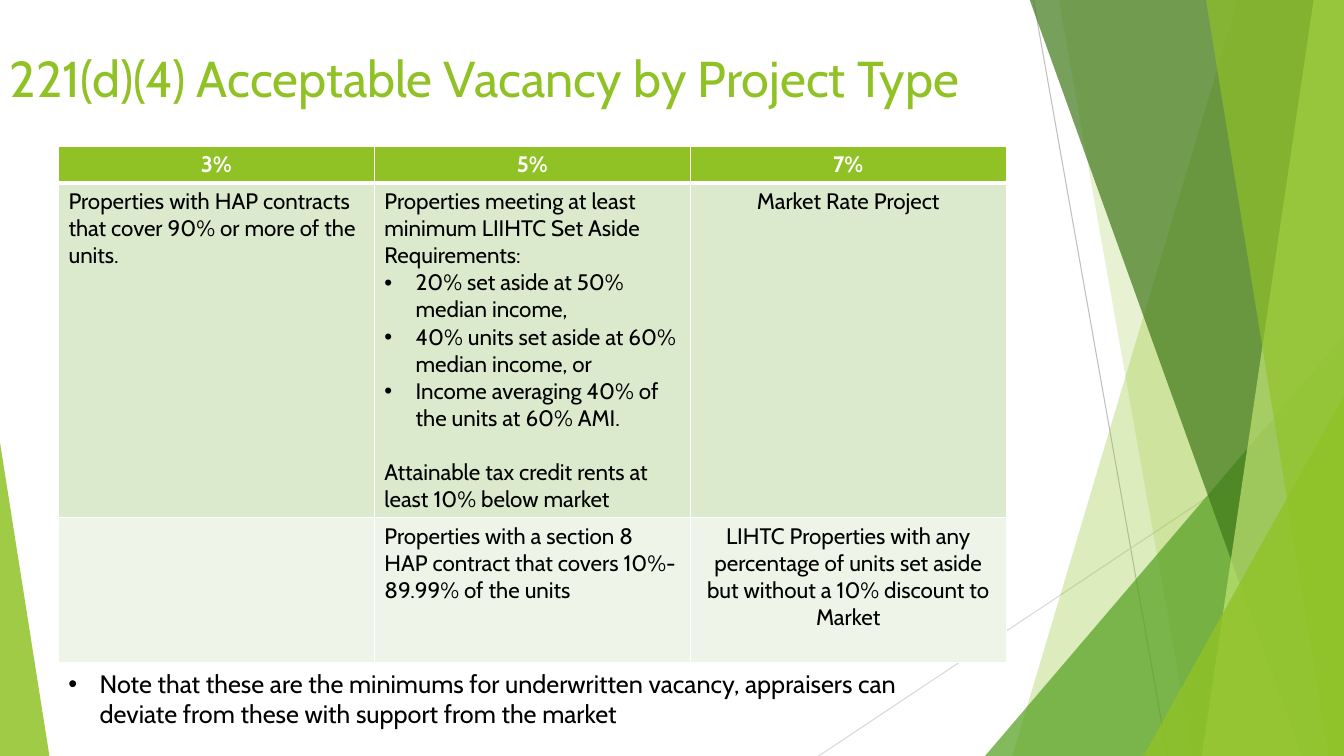
"""Build the slide on acceptable vacancy by project type."""
from dataclasses import dataclass
from typing import Any

from lxml.etree import SubElement
from pptx import Presentation
from pptx.dml.color import RGBColor
from pptx.enum.shapes import MSO_CONNECTOR as Connector, MSO_SHAPE as Preset
from pptx.enum.text import MSO_ANCHOR as Anchor, PP_ALIGN as Align
from pptx.oxml.ns import qn
from pptx.util import Inches, Pt


@dataclass(frozen=True)
class Theme:
    font: str = "Cabin"
    green: str = "90C226"
    leaf: str = "54A021"
    forest: str = "3F7819"
    lime: str = "C0E474"
    band_dark: str = "DBE9CD"
    band_light: str = "EEF4E8"
    white: str = "FFFFFF"
    black: str = "000000"
    gray: str = "BFBFBF"
    light_gray: str = "D9D9D9"
    title_size: int = 36
    note_size: int = 18
    table_size: int = 16


THEME = Theme()
TOP, BOTTOM, RIGHT = -0.01, 7.5, 13.33
INDENT = 0.31


@dataclass(frozen=True)
class Ray:
    start: tuple[float, float]
    end: tuple[float, float]
    color: str


@dataclass(frozen=True)
class Shard:
    top_left: float
    bottom_left: float
    color: str
    opacity: int


@dataclass(frozen=True)
class Wedge:
    left: float
    top: float
    width: float
    apex: float
    color: str
    opacity: int


@dataclass(frozen=True)
class Line:
    text: str
    align: Any = Align.LEFT
    bullet: bool = False
    space_before: float = 0


@dataclass(frozen=True)
class Style:
    size: int
    color: str
    bold: bool = False


RAYS = (
    Ray((10.25, 0), (11.58, BOTTOM), THEME.gray),
    Ray((RIGHT, 4.03), (8.12, BOTTOM), THEME.light_gray),
)
FACETS = (
    Shard(12.28, 10.04, THEME.green, 30),
    Shard(10.5, 11.83, THEME.green, 20),
    Wedge(9.77, 3.33, 3.56, 1, THEME.leaf, 72),
    Shard(10.21, 12.91, THEME.forest, 70),
    Shard(13.03, 11.92, THEME.lime, 70),
    Shard(11.96, 13.18, THEME.green, 65),
    Wedge(11.34, 3.93, 1.99, 1, THEME.green, 80),
    Wedge(0, 4.39, 0.49, 0, THEME.green, 85),
)
ROW_HEIGHTS = (0.35, 3.32, 1.44)
ROW_FILLS = (THEME.green, THEME.band_dark, THEME.band_light)
ROWS = (
    tuple((Line(share, Align.CENTER),) for share in ("3%", "5%", "7%")),
    (
        (Line("Properties with HAP contracts that cover 90% or more of the units."),),
        (
            Line("Properties meeting at least minimum LIIHTC Set Aside Requirements:"),
            Line("20% set aside at 50% median income,", bullet=True),
            Line("40% units set aside at 60% median income, or", bullet=True),
            Line("Income averaging 40% of the units at 60% AMI.", bullet=True),
            Line("Attainable tax credit rents at least 10% below market", space_before=19.4),
        ),
        (Line("Market Rate Project", Align.CENTER),),
    ),
    (
        (),
        (Line("Properties with a section 8 HAP contract that covers 10%-89.99% of the units"),),
        (Line("LIHTC Properties with any percentage of units set aside but without "
              "a 10% discount to Market", Align.CENTER),),
    ),
)
TITLE = Line("221(d)(4) Acceptable Vacancy by Project Type")
NOTE = Line("Note that these are the minimums for underwritten vacancy, appraisers can "
            "deviate from these with support from the market", bullet=True)


def apply_format(target: Any, values: dict[str, Any]) -> None:
    """Set every attribute in values on target."""
    for name, value in values.items():
        setattr(target, name, value)


def write_lines(frame: Any, lines: tuple[Line, ...], style: Style) -> None:
    """Write lines as paragraphs of a text frame."""
    for index, line in enumerate(lines):
        paragraph = frame.add_paragraph() if index else frame.paragraphs[0]
        apply_format(paragraph, {"alignment": line.align, "space_before": Pt(line.space_before)})
        run = paragraph.add_run()
        run.text = line.text
        apply_format(run.font, {"name": THEME.font, "size": Pt(style.size), "bold": style.bold})
        run.font.color.rgb = RGBColor.from_string(style.color)
        if line.bullet:
            properties = paragraph._p.get_or_add_pPr()
            properties.set("marL", str(Inches(INDENT)))
            properties.set("indent", str(-Inches(INDENT)))
            SubElement(properties, qn("a:buFont"), typeface="Arial")
            SubElement(properties, qn("a:buChar"), char="•")


def draw_ray(slide: Any, ray: Ray) -> None:
    """Draw a thin line without a shadow."""
    ends = [Inches(value) for value in (*ray.start, *ray.end)]
    connector = slide.shapes.add_connector(Connector.STRAIGHT, *ends)
    connector.line.width = Pt(0.75)
    connector.line.color.rgb = RGBColor.from_string(ray.color)
    SubElement(connector._element.spPr, qn("a:effectLst"))


def draw_facet(slide: Any, facet: Shard | Wedge) -> None:
    """Draw one translucent facet of the backdrop."""
    if isinstance(facet, Wedge):
        box = (facet.left, facet.top, facet.width, BOTTOM - facet.top)
        shape = slide.shapes.add_shape(Preset.ISOSCELES_TRIANGLE, *map(Inches, box))
        shape.adjustments[0] = facet.apex
    else:
        corners = ((RIGHT, TOP), (RIGHT, BOTTOM), (facet.bottom_left, BOTTOM))
        builder = slide.shapes.build_freeform(Inches(facet.top_left), Inches(TOP))
        builder.add_line_segments([(Inches(x), Inches(y)) for x, y in corners])
        shape = builder.convert_to_shape()
    shape.shadow.inherit = False
    shape.line.fill.background()
    shape.fill.solid()
    shape.fill.fore_color.rgb = RGBColor.from_string(facet.color)
    color = shape._element.spPr.find(qn("a:solidFill"))[0]
    SubElement(color, qn("a:alpha"), val=str(facet.opacity * 1000))


def draw_text(slide: Any, box: tuple[float, ...], line: Line, style: Style, anchor: Any) -> None:
    """Draw a wrapped text box."""
    frame = slide.shapes.add_textbox(*map(Inches, box)).text_frame
    apply_format(frame, {"word_wrap": True, "vertical_anchor": anchor})
    write_lines(frame, (line,), style)


def draw_borders(cell: Any, bottom_width: float) -> None:
    """Give a cell white borders."""
    properties = cell._tc.get_or_add_tcPr()
    for side, width in (("L", 1), ("R", 1), ("T", 1), ("B", bottom_width)):
        border = SubElement(properties, qn(f"a:ln{side}"), w=str(Pt(width)))
        fill = SubElement(border, qn("a:solidFill"))
        SubElement(fill, qn("a:srgbClr"), val=THEME.white)


def draw_table(slide: Any) -> None:
    """Draw the vacancy table."""
    box = (0.58, 1.45, 9.4, sum(ROW_HEIGHTS))
    table = slide.shapes.add_table(len(ROWS), len(ROWS[0]), *map(Inches, box)).table
    table.horz_banding = False
    for row_index, row in enumerate(ROWS):
        is_header = row_index == 0
        table.rows[row_index].height = Inches(ROW_HEIGHTS[row_index])
        style = Style(THEME.table_size, THEME.white if is_header else THEME.black, is_header)
        for column_index, lines in enumerate(row):
            cell = table.cell(row_index, column_index)
            draw_borders(cell, 3 if is_header else 1)
            cell.fill.solid()
            cell.fill.fore_color.rgb = RGBColor.from_string(ROW_FILLS[row_index])
            write_lines(cell.text_frame, lines, style)


def main() -> None:
    """Build and save the presentation."""
    presentation = Presentation()
    apply_format(presentation, {"slide_width": Inches(RIGHT), "slide_height": Inches(BOTTOM)})
    slide = presentation.slides.add_slide(presentation.slide_layouts[6])
    for ray in RAYS:
        draw_ray(slide, ray)
    for facet in FACETS:
        draw_facet(slide, facet)
    draw_text(slide, (0, 0.38, 10.49, 0.78), TITLE, Style(THEME.title_size, THEME.green), Anchor.MIDDLE)
    draw_table(slide)
    draw_text(slide, (0.58, 6.58, 8.59, 0.71), NOTE, Style(THEME.note_size, THEME.black), Anchor.TOP)
    presentation.save("out.pptx")


if __name__ == "__main__":
    main()
